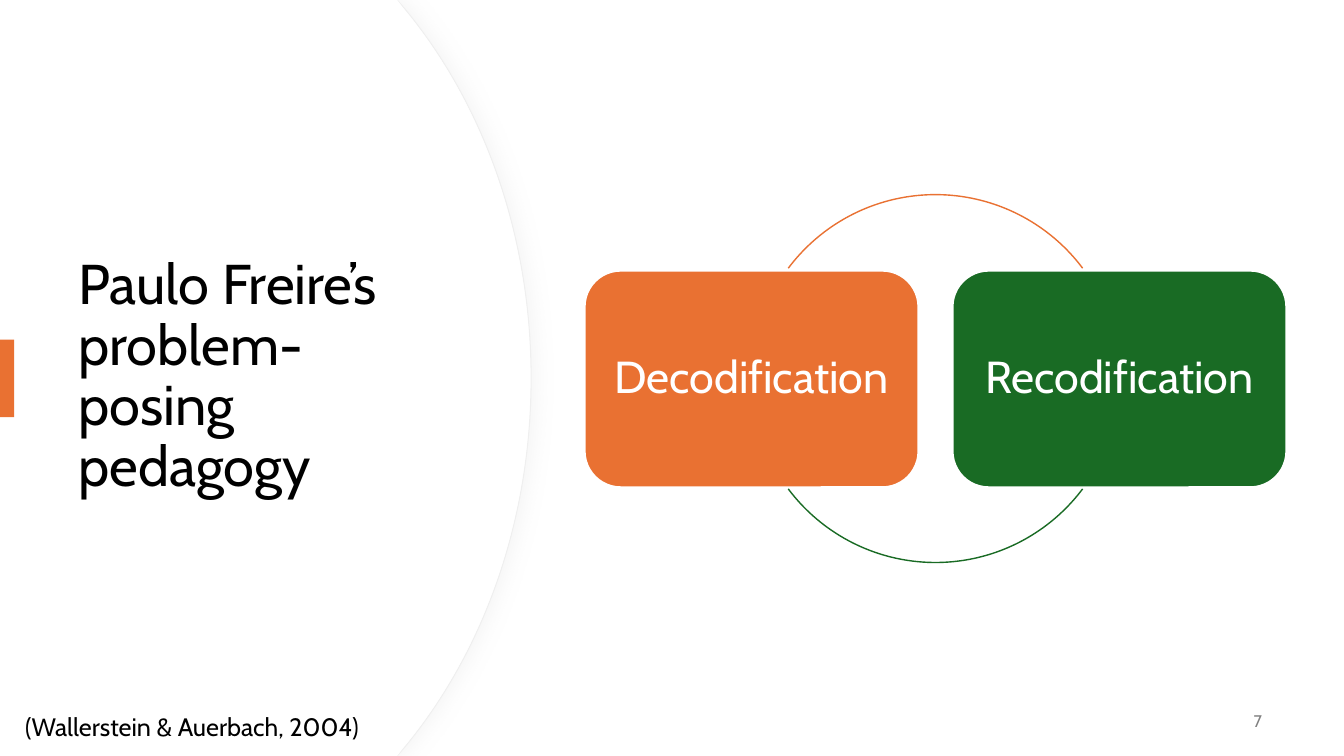
from dataclasses import dataclass

from lxml.etree import Element as Elem, SubElement as SubEl
from pptx import Presentation as Deck
from pptx.dml.color import RGBColor as Color
from pptx.enum.shapes import MSO_SHAPE as Kind
from pptx.enum.text import MSO_ANCHOR as Anchor, MSO_AUTO_SIZE as Fit, PP_ALIGN as Align
from pptx.oxml.ns import qn
from pptx.shapes.autoshape import Shape
from pptx.slide import Slide
from pptx.util import Pt


@dataclass(frozen=True)
class Theme:
    font: str = "Cabin"
    white: str = "FFFFFF"
    black: str = "000000"
    gray: str = "808080"
    rim: str = "EFEFEF"
    shade: str = "D9D9D9"
    orange: str = "E97132"
    green: str = "196B24"
    title: float = 40
    card: float = 32
    cite: float = 18
    page: float = 12


@dataclass(frozen=True)
class Box:
    left: float
    top: float
    width: float
    height: float

    def place(self) -> tuple[Pt, Pt, Pt, Pt]:
        return Pt(self.left), Pt(self.top), Pt(self.width), Pt(self.height)


@dataclass(frozen=True)
class Label:
    text: str
    size: float
    color: str
    align: Align = Align.LEFT
    anchor: Anchor = Anchor.MIDDLE
    space: float = 1.0


@dataclass(frozen=True)
class Step:
    text: str
    color: str
    start: float


THEME = Theme()
WIDE, HIGH = 960, 540
CARD = Box(417.6, 193.3, 238.5, 154.8)
PITCH = 262.8
RING = Box(536.8, 139, 262.8, 262.8)
TILT = 36.87
STEPS = [
    Step("Decodification", THEME.orange, 180 + TILT),
    Step("Recodification", THEME.green, TILT),
]
NOTES = [
    (Box(48.96, 91.44, 283.7, 356.4),
     Label("Paulo Freire’s problem-posing pedagogy", THEME.title, THEME.black, space=0.9)),
    (Box(692.6, 500.4, 216, 28.8),
     Label("7", THEME.page, THEME.gray, Align.RIGHT)),
    (Box(10.8, 504.7, 481.7, 29),
     Label("(Wallerstein & Auerbach, 2004)", THEME.cite, THEME.black, anchor=Anchor.TOP)),
]


def paint(shape: Shape, fill: str | None, line: str | None = None, weight: float = 1) -> None:
    shape.shadow.inherit = False
    if fill:
        shape.fill.solid()
        shape.fill.fore_color.rgb = Color.from_string(fill)
    else:
        shape.fill.background()
    if line:
        shape.line.color.rgb = Color.from_string(line)
        shape.line.width = Pt(weight)
    else:
        shape.line.fill.background()


def write(shape: Shape, label: Label) -> None:
    frame = shape.text_frame
    frame.word_wrap = True
    frame.vertical_anchor = label.anchor
    para = frame.paragraphs[0]
    para.alignment = label.align
    para.line_spacing = label.space
    run = para.add_run()
    run.text = label.text
    run.font.name = THEME.font
    run.font.size = Pt(label.size)
    run.font.color.rgb = Color.from_string(label.color)


def curve(side: Elem, guides: list[tuple[float, float]]) -> None:
    side.tag = qn("a:cubicBezTo")
    for i, (x, y) in enumerate(guides):
        point = Elem(qn("a:pt"), x=str(Pt(x)), y=str(Pt(y)))
        side.insert(i, point)


def panel(slide: Slide, shift: float, line: str | None = None) -> Shape:
    edge, bow, rim = 288.7 - shift, 344.9 - shift, 379.4 - shift
    points = [(283.7, 0), (edge, 5.8), (rim, HIGH / 2), (edge, HIGH - 5.8),
              (283.7, HIGH), (0, HIGH)]
    pen = slide.shapes.build_freeform(0, 0, scale=1.0)
    pen.add_line_segments([(Pt(x), Pt(y)) for x, y in points], close=True)
    shape = pen.convert_to_shape()
    sides = list(shape._element.iter(qn("a:lnTo")))
    guides = [(bow, 73.4), (rim, 167)]
    curve(sides[2], guides)
    curve(sides[3], [(x, HIGH - y) for x, y in reversed(guides)])
    paint(shape, THEME.white, line, 0.75)
    return shape


def shade(shape: Shape) -> None:
    effects = shape._element.spPr.find(qn("a:effectLst"))
    outer = SubEl(effects, qn("a:outerShdw"), blurRad=str(Pt(14)), dist=str(Pt(3)),
                  dir="0", algn="l", rotWithShape="0")
    tone = SubEl(outer, qn("a:srgbClr"), val=THEME.shade)
    SubEl(tone, qn("a:alpha"), val="25000")


def card(slide: Slide, box: Box, step: Step) -> None:
    shape = slide.shapes.add_shape(Kind.ROUNDED_RECTANGLE, *box.place())
    paint(shape, step.color, THEME.white, 1.5)
    frame = shape.text_frame
    frame.margin_left = frame.margin_right = Pt(9.4)
    frame.margin_top = frame.margin_bottom = Pt(9.4)
    write(shape, Label(step.text, THEME.card, THEME.white, Align.CENTER, space=0.9))


def arc(slide: Slide, step: Step) -> None:
    shape = slide.shapes.add_shape(Kind.ARC, *RING.place())
    paint(shape, None, step.color)
    sweep = 180 - 2 * TILT
    shape.adjustments[0] = step.start * 0.6
    shape.adjustments[1] = (step.start + sweep) * 0.6


def main() -> None:
    deck = Deck()
    deck.slide_width, deck.slide_height = Pt(WIDE), Pt(HIGH)
    slide = deck.slides.add_slide(deck.slide_layouts[6])
    shade(panel(slide, 0, THEME.rim))
    panel(slide, 0.7)
    tab = slide.shapes.add_shape(Kind.RECTANGLE, *Box(0, 242.6, 10.1, 55.4).place())
    paint(tab, THEME.orange)
    for i, step in enumerate(STEPS):
        card(slide, Box(CARD.left + i * PITCH, CARD.top, CARD.width, CARD.height), step)
        arc(slide, step)
    for box, label in NOTES:
        note = slide.shapes.add_textbox(*box.place())
        write(note, label)
        if label.anchor == Anchor.TOP:
            note.text_frame.auto_size = Fit.SHAPE_TO_FIT_TEXT
    deck.save("out.pptx")


if __name__ == "__main__":
    main()
